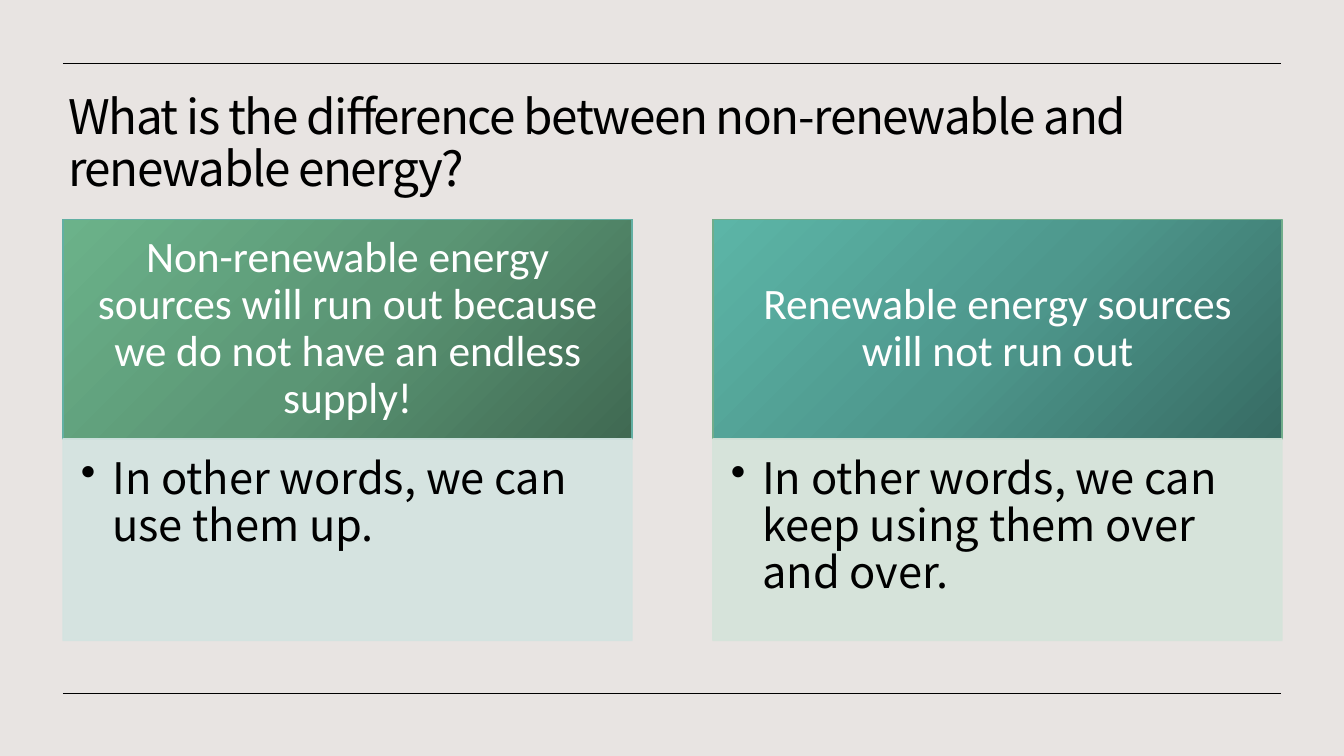
from pptx import Presentation
from pptx.dml.color import RGBColor
from pptx.enum.shapes import MSO_CONNECTOR, MSO_SHAPE
from pptx.enum.text import MSO_ANCHOR, MSO_AUTO_SIZE, PP_ALIGN
from pptx.oxml.ns import qn
from pptx.util import Pt
from copy import deepcopy
from lxml import etree

RECT, STRAIGHT = MSO_SHAPE.RECTANGLE, MSO_CONNECTOR.STRAIGHT
TOP, MIDDLE = MSO_ANCHOR.TOP, MSO_ANCHOR.MIDDLE
LEFT, CENTER = PP_ALIGN.LEFT, PP_ALIGN.CENTER
NO_FIT = MSO_AUTO_SIZE.NONE
TITLE_ONLY = 5
PX = 9525  # EMU per px, 96 px to the inch
HEAD_FONT, BODY_FONT = "Calibri", "Noto Sans CJK KR"
COLORS = {
    "background": "E8E4E2", "ink": "000000", "white": "FFFFFF",
    "teal_edge": "62AFA3", "green_edge": "70AD8B",
    "teal_tint": "D3E3E0", "green_tint": "D5E3DA",
}
GREENS = ("406952", "5B9675", "6BB28A")
TEALS = ("376B63", "4E988D", "5CB5A7")


class ComparisonSlide:
    def __init__(self, deck):
        self.slide = deck.slides.add_slide(deck.slide_layouts[TITLE_ONLY])
        fill = self.slide.background.fill
        fill.solid()
        fill.fore_color.rgb = self.color("background")

    def color(self, name):
        return RGBColor.from_string(COLORS[name])

    def set_text(self, shape, text, size, font, color, align, anchor, insets):
        frame = shape.text_frame
        frame.auto_size = NO_FIT
        frame.word_wrap = True
        frame.vertical_anchor = anchor
        (frame.margin_left, frame.margin_top,
         frame.margin_right, frame.margin_bottom) = [n * PX for n in insets]
        frame.text = text
        paragraph = frame.paragraphs[0]
        paragraph.alignment = align
        paragraph.line_spacing = 0.9
        paragraph.space_before = Pt(0)
        paragraph.font.size = Pt(size)
        paragraph.font.name = font
        paragraph.font.color.rgb = self.color(color)
        return paragraph

    def title(self, text, x, y, w, h):
        title = self.slide.shapes.title
        title.left, title.top, title.width, title.height = [n * PX for n in (x, y, w, h)]
        paragraph = self.set_text(title, text, 34, BODY_FONT, "ink", LEFT, MIDDLE, (10, 5, 10, 5))
        paragraph.runs[0]._r.get_or_add_rPr().set("spc", "-100")

    def rule(self, x1, x2, y):
        rule = self.slide.shapes.add_connector(STRAIGHT, x1 * PX, y * PX, x2 * PX, y * PX)
        rule.line.color.rgb = self.color("ink")
        rule.line.width = Pt(0.5)
        etree.SubElement(rule._element.spPr, qn("a:effectLst"))

    def box(self, x, y, w, h, edge):
        box = self.slide.shapes.add_shape(RECT, x * PX, y * PX, w * PX, h * PX)
        box.shadow.inherit = False
        box.line.color.rgb = self.color(edge)
        box.line.width = Pt(1)
        return box

    def heading(self, text, x, y, w, h, shades, edge):
        heading = self.box(x, y, w, h, edge)
        fill = heading.fill
        fill.gradient()
        fill.gradient_angle = 135
        first = fill.gradient_stops[0]._gs
        first.addnext(deepcopy(first))
        for stop, position, shade in zip(fill.gradient_stops, (0, 0.5, 1), shades):
            stop.position = position
            stop.color.rgb = RGBColor.from_string(shade)
        self.set_text(heading, text, 31, HEAD_FONT, "white", CENTER, MIDDLE, (23, 13, 23, 13))

    def detail(self, text, x, y, w, h, tint):
        detail = self.box(x, y, w, h, tint)
        detail.fill.solid()
        detail.fill.fore_color.rgb = self.color(tint)
        for color in detail._element.spPr.iter(qn("a:srgbClr")):
            etree.SubElement(color, qn("a:alpha"), val="90000")
        paragraph = self.set_text(detail, text, 31, BODY_FONT, "ink", LEFT, TOP, (17, 17, 23, 26))
        # Bullet with a hanging indent
        properties = paragraph._p.get_or_add_pPr()
        properties.set("marL", str(30 * PX))
        properties.set("indent", str(-30 * PX))
        bullet = etree.Element(qn("a:buChar"), char="•")
        properties.find(qn("a:defRPr")).addprevious(bullet)


def main():
    deck = Presentation()
    deck.slide_width, deck.slide_height = 1280 * PX, 720 * PX
    page = ComparisonSlide(deck)

    # Title between the top rule and the columns
    page.title("What is the difference between non-renewable and renewable energy?",
               55, 83, 1166, 110)
    for rule_y in (60, 660):
        page.rule(60, 1220, rule_y)

    # Two columns: heading above detail
    columns = [
        ("Non-renewable energy sources will run out because we do not have an endless supply!",
         "In other words, we can use them up.", GREENS, "teal_edge", "teal_tint"),
        ("Renewable energy sources will not run out",
         "In other words, we can keep using them over and over.",
         TEALS, "green_edge", "green_tint"),
    ]
    left, top, width, pitch = 60, 209, 542, 619
    heading_height, detail_height = 209, 192
    for index, (heading, detail, shades, edge, tint) in enumerate(columns):
        x = left + index * pitch
        page.heading(heading, x, top, width, heading_height, shades, edge)
        page.detail(detail, x, top + heading_height, width, detail_height, tint)

    deck.save("out.pptx")


if __name__ == "__main__":
    main()
